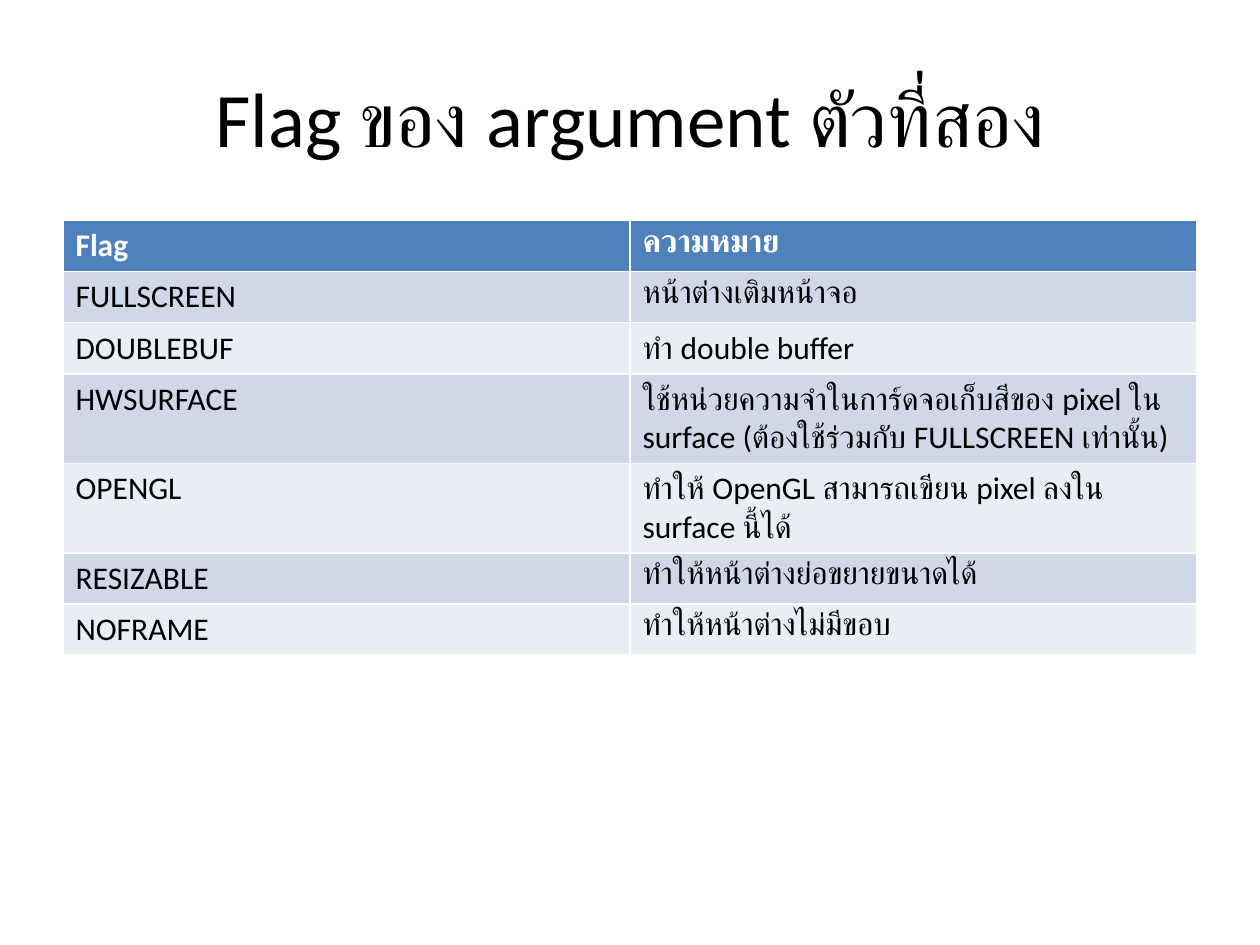
from pptx import Presentation
from pptx.dml.color import RGBColor
from pptx.enum.text import MSO_ANCHOR, PP_ALIGN
from pptx.util import Pt

BLACK = RGBColor(0x00, 0x00, 0x00)
WHITE = RGBColor(0xFF, 0xFF, 0xFF)
HEADER_BLUE = RGBColor(0x4F, 0x81, 0xBD)
BAND_DARK = RGBColor(0xD0, 0xD8, 0xE8)
BAND_LIGHT = RGBColor(0xE9, 0xED, 0xF4)

ROWS = [
    ("Flag", "ความหมาย"),
    ("FULLSCREEN", "หน้าต่างเติมหน้าจอ"),
    ("DOUBLEBUF", "ทำ double buffer"),
    ("HWSURFACE", "ใช้หน่วยความจำในการ์ดจอเก็บสีของ pixel ใน surface "
                  "(ต้องใช้ร่วมกับ FULLSCREEN เท่านั้น)"),
    ("OPENGL", "ทำให้ OpenGL สามารถเขียน pixel ลงใน surface นี้ได้"),
    ("RESIZABLE", "ทำให้หน้าต่างย่อขยายขนาดได้"),
    ("NOFRAME", "ทำให้หน้าต่างไม่มีขอบ"),
]
ROW_HEIGHT = 29.2


def set_font(p, size, color, bold=False):
    p.font.name = "Calibri"
    p.font.size = Pt(size)
    p.font.bold = bold
    p.font.color.rgb = color


prs = Presentation()
prs.slide_width, prs.slide_height = Pt(720), Pt(540)
s = prs.slides.add_slide(prs.slide_layouts[5])

# Title
title = s.shapes.title
title.left, title.top, title.width, title.height = Pt(36), Pt(21.6), Pt(648), Pt(90)
tf = title.text_frame
tf.text = "Flag ของ argument ตัวที่สอง"
tf.vertical_anchor = MSO_ANCHOR.MIDDLE
p = tf.paragraphs[0]
p.alignment = PP_ALIGN.CENTER
set_font(p, 44, BLACK)

# Flag table; the default table style supplies the white borders
table = s.shapes.add_table(len(ROWS), 2, Pt(36), Pt(126), Pt(648),
                           Pt(ROW_HEIGHT * len(ROWS))).table
for i, texts in enumerate(ROWS):
    table.rows[i].height = Pt(ROW_HEIGHT)
    header = i == 0
    fill = HEADER_BLUE if header else BAND_DARK if i % 2 else BAND_LIGHT
    for j, text in enumerate(texts):
        cell = table.cell(i, j)
        cell.fill.solid()
        cell.fill.fore_color.rgb = fill
        cell.text = text
        set_font(cell.text_frame.paragraphs[0], 18, WHITE if header else BLACK, header)

prs.save("out.pptx")
